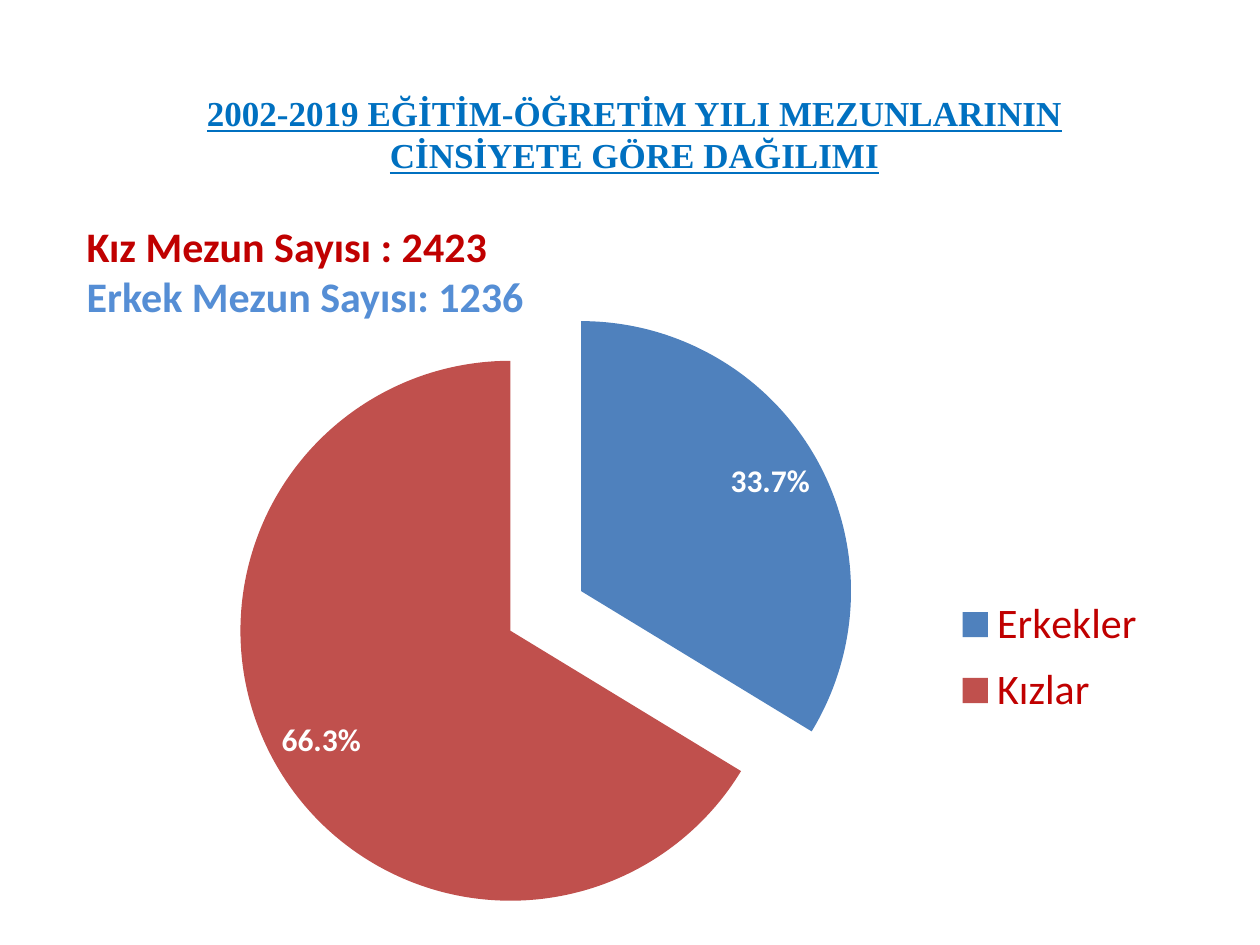
from dataclasses import dataclass

from lxml.etree import SubElement
from pptx import Presentation
from pptx.chart.data import CategoryChartData
from pptx.dml.color import RGBColor
from pptx.enum.chart import XL_CHART_TYPE, XL_LABEL_POSITION, XL_LEGEND_POSITION
from pptx.enum.text import PP_ALIGN
from pptx.oxml import parse_xml
from pptx.oxml.ns import nsdecls, qn
from pptx.util import Inches, Pt


@dataclass(frozen=True)
class Theme:
    body_font: str = "Calibri"
    title_font: str = "Times New Roman"
    title_size: int = 20
    count_size: int = 24
    label_size: int = 18
    title: str = "0070C0"
    girls: str = "C00000"
    boys: str = "558ED5"
    label: str = "FFFFFF"
    slices: tuple = ("4F81BD", "C0504D")


class SlideBuilder:
    def __init__(self, slide, theme):
        self.slide = slide
        self.theme = theme

    def style_font(self, font, name, size, color, bold=False):
        font.name = name
        font.size = Pt(size)
        font.bold = bold
        font.color.rgb = RGBColor.from_string(color)

    def add_shadow(self, run):
        effects = parse_xml(
            f'<a:effectLst {nsdecls("a")}>'
            '<a:outerShdw blurRad="38100" dist="38100" dir="2700000" algn="tl">'
            '<a:srgbClr val="000000"><a:alpha val="43000"/></a:srgbClr>'
            '</a:outerShdw></a:effectLst>'
        )
        run.font._element.find(qn("a:solidFill")).addnext(effects)

    def add_text(self, box, lines, font_name, size, align=PP_ALIGN.LEFT,
                 underline=False, shadow=False):
        shape = self.slide.shapes.add_textbox(*map(Inches, box))
        frame = shape.text_frame
        frame.word_wrap = True
        for index, (text, color) in enumerate(lines):
            paragraph = frame.add_paragraph() if index else frame.paragraphs[0]
            paragraph.alignment = align
            run = paragraph.add_run()
            run.text = text
            self.style_font(run.font, font_name, size, color, bold=True)
            run.font.underline = underline
            if shadow:
                self.add_shadow(run)

    def set_layout(self, parent, left, top, width, height, inner=False):
        layout = parent.find(qn("c:layout"))
        if layout is None:
            layout = SubElement(parent, qn("c:layout"))
            anchor = parent.find(qn("c:legendPos"))
            if anchor is not None:
                anchor.addnext(layout)
            else:
                parent.insert(0, layout)
        for child in list(layout):
            layout.remove(child)
        manual = SubElement(layout, qn("c:manualLayout"))
        settings = [("layoutTarget", "inner")] if inner else []
        settings += [("xMode", "edge"), ("yMode", "edge"), ("x", left),
                     ("y", top), ("w", width), ("h", height)]
        for tag, value in settings:
            SubElement(manual, qn(f"c:{tag}")).set("val", str(value))

    def add_pie(self, box, categories, values, explosion):
        theme = self.theme
        data = CategoryChartData()
        data.categories = categories
        data.add_series("Series 1", values)
        chart = self.slide.shapes.add_chart(
            XL_CHART_TYPE.PIE, *map(Inches, box), data).chart
        chart.has_title = False
        self.style_font(chart.font, theme.body_font, theme.label_size, theme.label)

        plot = chart.plots[0]
        plot.vary_by_categories = True
        series = plot.series[0]
        for index, color in enumerate(theme.slices):
            fill = series.points[index].format.fill
            fill.solid()
            fill.fore_color.rgb = RGBColor.from_string(color)
        exploded = parse_xml(f'<c:explosion {nsdecls("c")} val="{explosion}"/>')
        series._element.find(qn("c:dPt")).addprevious(exploded)

        labels = series.data_labels
        labels.show_percentage = True
        labels.show_value = False
        labels.number_format = "0.0%"
        labels.number_format_is_linked = False
        labels.position = XL_LABEL_POSITION.INSIDE_END
        self.style_font(labels.font, theme.body_font, theme.label_size,
                        theme.label, bold=True)

        chart.has_legend = True
        legend = chart.legend
        legend.position = XL_LEGEND_POSITION.RIGHT
        legend.include_in_layout = False
        self.style_font(legend.font, theme.body_font, theme.count_size, theme.girls)
        self.set_layout(legend._element, 0.79, 0.46, 0.2, 0.22)
        plot_area = chart._chartSpace.chart.plotArea
        self.set_layout(plot_area, 0.09, 0.03, 0.61, 0.94, inner=True)


def main():
    presentation = Presentation()
    presentation.slide_width = Inches(10)
    presentation.slide_height = Inches(7.5)
    slide = presentation.slides.add_slide(presentation.slide_layouts[6])
    theme = Theme()
    builder = SlideBuilder(slide, theme)

    builder.add_pie((1.14, 2.21, 8.08, 5.28), ("Erkekler", "Kızlar"),
                    (33.7, 66.3), explosion=15)
    builder.add_text(
        (0.59, 1.7, 5.33, 0.91),
        [("Kız Mezun Sayısı : 2423", theme.girls),
         ("Erkek Mezun Sayısı: 1236", theme.boys)],
        theme.body_font, theme.count_size, shadow=True)
    builder.add_text(
        (0.98, 0.68, 8.11, 0.77),
        [("2002-2019 EĞİTİM-ÖĞRETİM YILI MEZUNLARININ CİNSİYETE GÖRE DAĞILIMI",
          theme.title)],
        theme.title_font, theme.title_size, align=PP_ALIGN.CENTER, underline=True)

    presentation.save("out.pptx")


if __name__ == "__main__":
    main()
